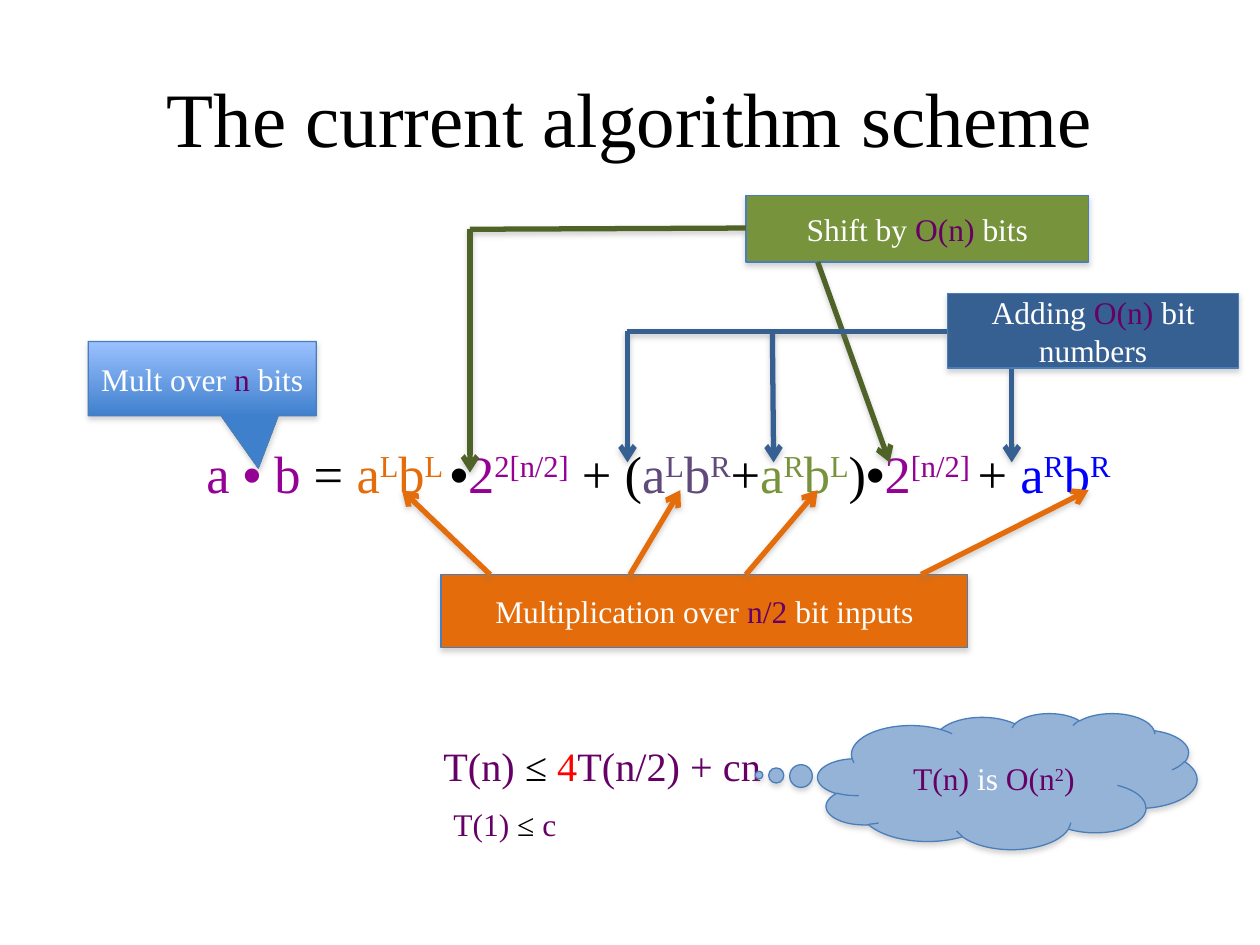
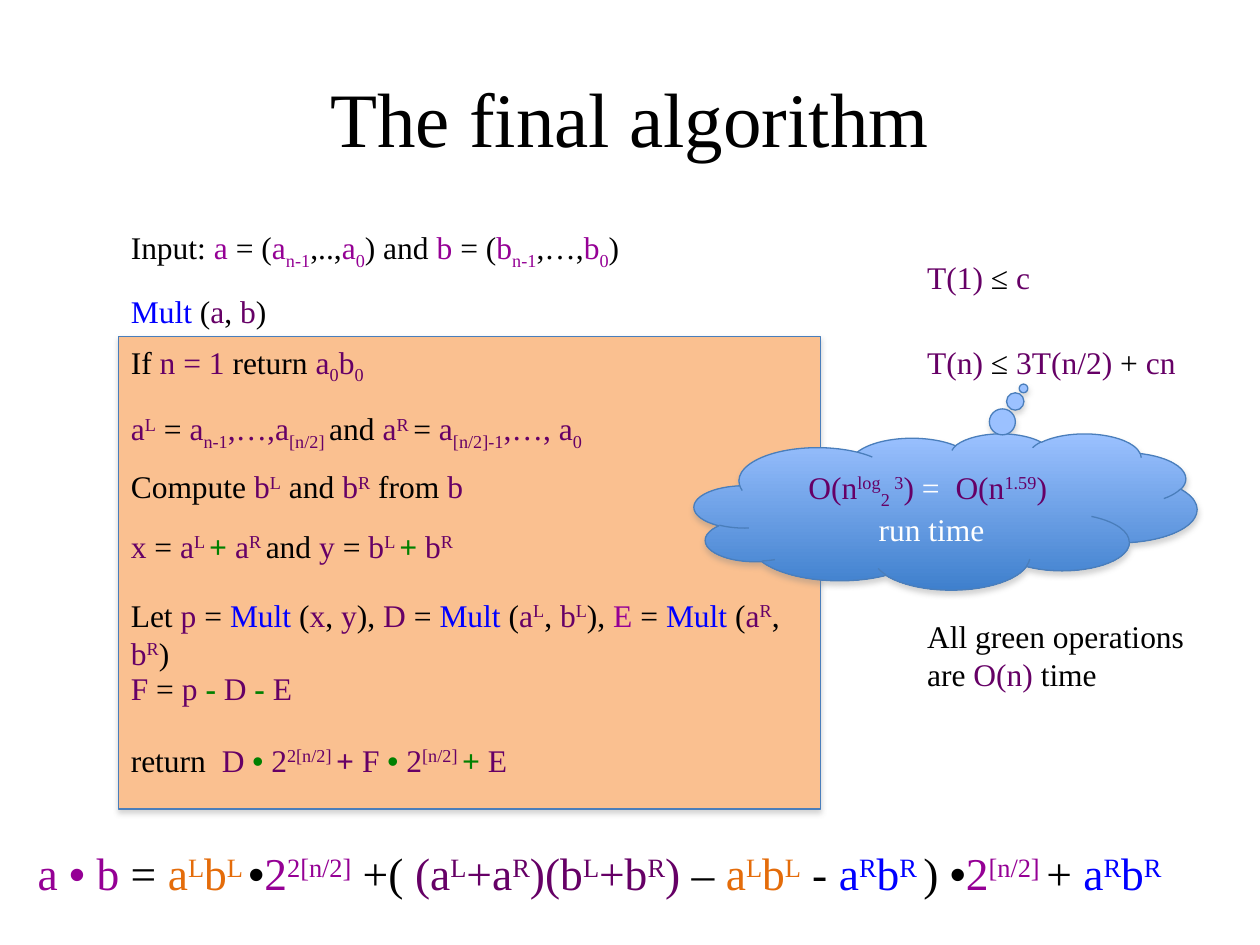
from dataclasses import dataclass

from lxml import etree
from pptx import Presentation
from pptx.dml.color import RGBColor
from pptx.enum.shapes import MSO_CONNECTOR, MSO_SHAPE
from pptx.enum.text import MSO_ANCHOR, PP_ALIGN
from pptx.oxml.ns import qn
from pptx.util import Inches, Pt

RECT = MSO_SHAPE.RECTANGLE
RECT_CALLOUT = MSO_SHAPE.RECTANGULAR_CALLOUT
CLOUD = MSO_SHAPE.CLOUD_CALLOUT
STRAIGHT = MSO_CONNECTOR.STRAIGHT
LEFT, CENTER = PP_ALIGN.LEFT, PP_ALIGN.CENTER
TOP, MIDDLE = MSO_ANCHOR.TOP, MSO_ANCHOR.MIDDLE

FONT, BULLET_FONT = "Times New Roman", "Arial"
BULLET = "•"

BLACK = RGBColor(0x00, 0x00, 0x00)
WHITE = RGBColor(0xFF, 0xFF, 0xFF)
MAGENTA = RGBColor(0x95, 0x00, 0x95)
PURPLE = RGBColor(0x66, 0x00, 0x66)
VIOLET = RGBColor(0x60, 0x4A, 0x7B)
ORANGE = RGBColor(0xE4, 0x6C, 0x0A)
PEACH = RGBColor(0xFA, 0xC0, 0x90)
BLUE = RGBColor(0x00, 0x00, 0xFF)
STEEL = RGBColor(0x37, 0x60, 0x92)
PALE_BLUE = RGBColor(0x95, 0xB3, 0xD7)
OUTLINE = RGBColor(0x4A, 0x7E, 0xBB)
OLIVE = RGBColor(0x77, 0x93, 0x3C)
DARK_OLIVE = RGBColor(0x4F, 0x62, 0x28)
GREEN = RGBColor(0x00, 0x80, 0x00)
RED = RGBColor(0xFF, 0x00, 0x00)
GRADIENT = (RGBColor(0x9B, 0xC1, 0xFF), RGBColor(0x3F, 0x80, 0xCD))

# Markup tags: a colour tag returns to the baseline, a script tag keeps the colour.
COLOURS = {"k": BLACK, "w": WHITE, "m": MAGENTA, "p": PURPLE, "v": VIOLET, "o": ORANGE,
           "b": BLUE, "l": OLIVE, "g": GREEN, "r": RED, "G": GREEN, "P": PURPLE}
BOLD_TAGS = "GP"
BASELINES = {"^": 30000, "_": -25000, "=": 0}

LOW_PRODUCT = "<o>a<^>L<=>b<^>L"
HIGH_PRODUCT = "<b>a<^>R<=>b<^>R"
EQUATION_START = f"<m>a <m>•<m> b<k> = {LOW_PRODUCT} <k>•<m>2<^>2[n/2]"
EQUATION_END = f"<k>•<m>2<^>[n/2] <k>+ {HIGH_PRODUCT}"
BASE_CASE = "<p>T(1) <k>≤ <p>c"


@dataclass
class Text:
    left: float
    top: float
    width: float
    lines: tuple[str, ...]
    height: float = 0.4
    size: float = 18


@dataclass
class Box:
    left: float
    top: float
    width: float
    height: float
    fill: RGBColor | tuple[RGBColor, RGBColor]
    lines: tuple[str, ...] = ()
    kind: int = RECT
    pointer: tuple[float, float] | None = None


@dataclass
class Line:
    start: tuple[float, float]
    end: tuple[float, float]
    arrow: bool = True


def write(tf, lines: tuple[str, ...], size: float, align=LEFT, anchor=TOP) -> None:
    """Fill a text frame, one marked-up line per paragraph."""
    tf.word_wrap = True
    tf.vertical_anchor = anchor
    for i, line in enumerate(lines):
        p = tf.paragraphs[0] if i == 0 else tf.add_paragraph()
        p.alignment = align
        colour, bold = BLACK, False
        for piece in line.split("<")[1:]:
            tag, text = piece.split(">", 1)
            if tag in COLOURS:
                colour, bold = COLOURS[tag], tag in BOLD_TAGS
            r = p.add_run()
            r.text = text
            r.font.name = BULLET_FONT if text == BULLET else FONT
            r.font.size = Pt(size)
            r.font.bold = bold
            r.font.color.rgb = colour
            if BASELINES.get(tag):
                r.font._element.set("baseline", str(BASELINES[tag]))


def add_shadow(shape, alpha: int, distance: float) -> None:
    effects = etree.SubElement(shape._element.spPr, qn("a:effectLst"))
    shadow = etree.SubElement(effects, qn("a:outerShdw"), blurRad=str(Pt(3.1)),
                              dist=str(Pt(distance)), dir="5400000", rotWithShape="0")
    colour = etree.SubElement(shadow, qn("a:srgbClr"), val="808080")
    etree.SubElement(colour, qn("a:alpha"), val=str(alpha * 1000))


def add_text(s, t: Text, align=LEFT, anchor=TOP) -> None:
    tb = s.shapes.add_textbox(Inches(t.left), Inches(t.top), Inches(t.width), Inches(t.height))
    write(tb.text_frame, t.lines, t.size, align, anchor)


def add_title(s, title: str) -> None:
    add_text(s, Text(0.5, 0.3, 9, ("<k>" + title,), 1.25, 44), CENTER, MIDDLE)


def add_box(s, b: Box) -> None:
    sp = s.shapes.add_shape(b.kind, Inches(b.left), Inches(b.top),
                            Inches(b.width), Inches(b.height))
    if b.pointer:
        sp.adjustments[0], sp.adjustments[1] = b.pointer
    if isinstance(b.fill, RGBColor):
        sp.fill.solid()
        sp.fill.fore_color.rgb = b.fill
    else:
        sp.fill.gradient()
        sp.fill.gradient_angle = 270
        for stop, position, colour in zip(sp.fill.gradient_stops, (0, 1), b.fill):
            stop.position = position
            stop.color.rgb = colour
    sp.line.color.rgb = OUTLINE
    sp.line.width = Pt(0.75)
    add_shadow(sp, 35, 1.8)
    write(sp.text_frame, b.lines, 18, CENTER, MIDDLE)


def add_lines(s, colour: RGBColor, lines: tuple[Line, ...]) -> None:
    for line in lines:
        c = s.shapes.add_connector(STRAIGHT, *map(Inches, line.start + line.end))
        c.line.color.rgb = colour
        c.line.width = Pt(3)
        if line.arrow:
            etree.SubElement(c.line._get_or_add_ln(), qn("a:tailEnd"), type="arrow")
        add_shadow(c, 38, 1.6)


def build_current_scheme(s) -> None:
    add_title(s, "The current algorithm scheme")
    cross_products = "<v>a<^>L<=>b<^>R<k>+<l>a<^>R<=>b<^>L"
    add_text(s, Text(1.54, 3.45, 7.99, (
        f"{EQUATION_START}<k> + ({cross_products}<k>){EQUATION_END}",), 0.61, 30))
    add_box(s, Box(0.7, 2.71, 1.81, 0.59, GRADIENT, ("<w>Mult over <p>n<w> bits",),
                   RECT_CALLOUT, (0.246, 1.205)))

    add_box(s, Box(3.5, 4.56, 4.18, 0.58, ORANGE,
                   ("<w>Multiplication over <p>n/2<w> bit inputs",)))
    product_arrows = ((3.89, 3.19), (5, 5.4), (5.92, 6.49), (7.31, 8.64))
    add_lines(s, ORANGE, tuple(Line((x1, 4.56), (x2, 3.89)) for x1, x2 in product_arrows))

    add_box(s, Box(5.92, 1.55, 2.72, 0.53, OLIVE, ("<w>Shift by <p>O(n) <w>bits",)))
    add_lines(s, DARK_OLIVE, (Line((6.49, 2.08), (7.06, 3.67)),
                              Line((5.92, 1.81), (3.73, 1.82), arrow=False),
                              Line((3.73, 1.82), (3.73, 3.75))))

    add_box(s, Box(7.52, 2.33, 2.31, 0.59, STEEL, ("<w>Adding <p>O(n)<w> bit numbers",)))
    add_lines(s, STEEL, (Line((8.03, 2.93), (8.03, 3.67)),
                         Line((7.52, 2.63), (4.98, 2.63), arrow=False),
                         Line((6.13, 2.63), (6.14, 3.67)),
                         Line((4.98, 2.63), (4.98, 3.67))))

    add_text(s, Text(3.42, 5.83, 2.98, ("<p>T(n)<k> ≤ <r>4<p>T(n/2) + cn",), 0.49, 23))
    add_text(s, Text(3.5, 6.34, 1.05, (BASE_CASE,)))
    add_box(s, Box(6.49, 5.66, 3.01, 1.08, PALE_BLUE, ("<p>T(n) <w>is <p>O(n<^>2<=>)",),
                   CLOUD, (-0.655, -0.045)))


def build_final_algorithm(s) -> None:
    add_box(s, Box(0.94, 2.67, 5.57, 3.75, PEACH))
    add_title(s, "The final algorithm")
    steps = (
        (1.76, 4.14, "<k>Input: <m>a<k> = (<m>a<_>n-1<k>,..,<m>a<_>0<k>) and "
                     "<m>b<k> = (<m>b<_>n-1<k>,…,<m>b<_>0<k>)"),
        (2.27, 1.3, "<b>Mult<k> (<p>a<k>, <p>b<k>)"),
        (2.67, 2.13, "<k>If <p>n = 1 <k>return <p>a<_>0<=>b<_>0"),
        (3.2, 3.98, "<p>a<^>L<k> = <p>a<_>n-1<=>,…,a<_>[n/2] <k>and "
                    "<p>a<^>R <k>= <p>a<_>[n/2]-1<=>,…, a<_>0"),
        (3.66, 2.86, "<k>Compute <p>b<^>L<k> and <p>b<^>R<k> from <p>b"),
        (4.13, 2.95, "<p>x<k> = <p>a<^>L <G>+ <p>a<^>R <k>and "
                     "<p>y<k> = <p>b<^>L <G>+ <p>b<^>R"),
        (4.68, 5.62, "<k>Let <p>p<k> = <b>Mult<k> (<p>x<k>, <p>y<k>), "
                     "<p>D<k> = <b>Mult<k> (<p>a<^>L<k>, <p>b<^>L<k>), "
                     "<m>E<k> = <b>Mult<k> (<p>a<^>R<k>, <p>b<^>R<k>)"),
        (5.26, 1.55, "<p>F<k> = <p>p <G>-<p> D <G>-<p> E"),
        (5.83, 3.3, "<k>return  <p>D <g>•<p> 2<^>2[n/2] <P>+<p> F "
                    "<g>•<p> 2<^>[n/2] <G>+<p> E"),
    )
    for top, width, step in steps:
        add_text(s, Text(0.94, top, width, (step,)))

    sum_product = "<p>(a<^>L<=>+a<^>R<=>)(b<^>L<=>+b<^>R<=>) "
    add_text(s, Text(0.2, 6.66, 9.59, (
        f"{EQUATION_START}<k> +( {sum_product}<k>– {LOW_PRODUCT}<k> - "
        f"{HIGH_PRODUCT} <k>) {EQUATION_END}",), 0.54, 26))

    add_text(s, Text(7.26, 2, 1.05, (BASE_CASE,)))
    add_text(s, Text(7.26, 4.85, 2.27, ("<k>All green operations",
                                        "<k>are <p>O(n) <k>time"), 0.71))
    add_text(s, Text(7.26, 2.67, 2.25, ("<p>T(n) <k>≤ <p>3T(n/2)<k> + <p>cn",)))
    add_box(s, Box(5.51, 3.44, 3.99, 1.24, GRADIENT, (
        "<p>O(n<^>log<_>2<^> 3<=>) <w>=  <p>O(n<^>1.59<=>)", "<w> run time"),
        CLOUD, (0.155, -0.788)))


def main() -> None:
    prs = Presentation()
    prs.slide_width, prs.slide_height = Inches(10), Inches(7.5)
    for build in (build_current_scheme, build_final_algorithm):
        build(prs.slides.add_slide(prs.slide_layouts[6]))
    prs.save("out.pptx")


if __name__ == "__main__":
    main()
